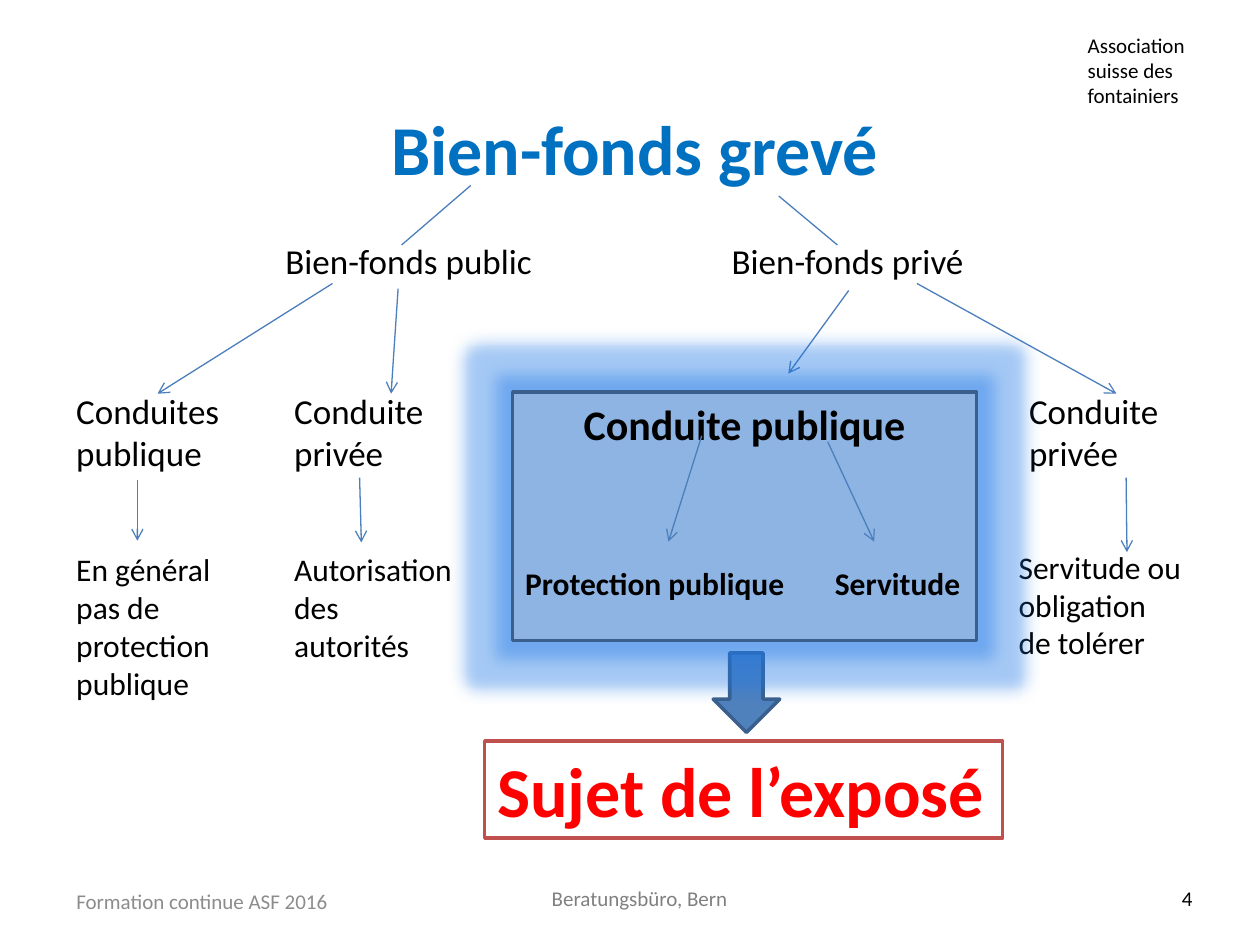
from lxml import etree
from pptx import Presentation
from pptx.dml.color import RGBColor
from pptx.enum import shapes, text
from pptx.oxml.ns import qn
from pptx.util import Pt

BLACK = RGBColor(0x00, 0x00, 0x00)
WHITE = RGBColor(0xFF, 0xFF, 0xFF)
TITLE_BLUE = RGBColor(0x00, 0x70, 0xC0)
LINE_BLUE = RGBColor(0x4B, 0x7E, 0xBC)
ARROW_BLUE = RGBColor(0x4F, 0x81, 0xBD)
OUTLINE_BLUE = RGBColor(0x3A, 0x5F, 0x8C)
PANEL_BLUE = RGBColor(0x8E, 0xB4, 0xE3)
GLOW_BLUE = RGBColor(0x1F, 0x78, 0xE6)
OUTLINE_RED = RGBColor(0xC0, 0x50, 0x4D)
RED = RGBColor(0xFF, 0x00, 0x00)
FOOTER_GREY = RGBColor(0x8C, 0x8C, 0x8C)
AUTHOR_GREY = RGBColor(0x80, 0x80, 0x80)

LEFT, CENTER, RIGHT = (text.PP_ALIGN.LEFT, text.PP_ALIGN.CENTER,
                       text.PP_ALIGN.RIGHT)
TOP, MIDDLE = text.MSO_ANCHOR.TOP, text.MSO_ANCHOR.MIDDLE


def style(paragraph, size, color=BLACK, bold=False, align=LEFT):
    paragraph.alignment = align
    font = paragraph.font
    font.name, font.size, font.bold = "Calibri", Pt(size), bold
    font.color.rgb = color


def write(shape, lines, size, color=BLACK, bold=False, align=LEFT,
          anchor=TOP, wrap=False):
    frame = shape.text_frame
    frame.word_wrap, frame.vertical_anchor = wrap, anchor
    frame.text = "\n".join(lines)
    for paragraph in frame.paragraphs:
        style(paragraph, size, color, bold, align)


def add_label(slide, box, lines, size, **options):
    shape = slide.shapes.add_textbox(*map(Pt, box))
    write(shape, lines, size, **options)
    return shape


def add_box(slide, kind, box, fill, line=None):
    shape = slide.shapes.add_shape(kind, *map(Pt, box))
    shape.shadow.inherit = False
    shape.fill.solid()
    shape.fill.fore_color.rgb = fill
    if line is None:
        shape.line.fill.background()
    else:
        shape.line.color.rgb, shape.line.width = line, Pt(2)
    return shape


def add_line(slide, x1, y1, x2, y2, arrow=True):
    line = slide.shapes.add_connector(
        shapes.MSO_CONNECTOR.STRAIGHT, Pt(x1), Pt(y1), Pt(x2), Pt(y2))
    line.line.color.rgb, line.line.width = LINE_BLUE, Pt(0.75)
    if arrow:
        etree.SubElement(line.line._get_or_add_ln(), qn("a:tailEnd"), type="arrow")
    etree.SubElement(line._element.spPr, qn("a:effectLst"))


def add_glow(shape, radius, color, alpha):
    effects = shape._element.spPr.find(qn("a:effectLst"))
    glow = etree.SubElement(effects, qn("a:glow"), rad=str(Pt(radius)))
    tint = etree.SubElement(glow, qn("a:srgbClr"), val=str(color))
    etree.SubElement(tint, qn("a:alpha"), val=str(alpha * 1000))


def add_header(slide, box):
    left, top, width, height = box
    add_label(slide, (left, top + 19.5, 652.5, 99.5), ["Bien-fonds grevé"], 40,
              color=TITLE_BLUE, bold=True, align=CENTER, anchor=MIDDLE, wrap=True)
    sender = add_box(slide, shapes.MSO_SHAPE.RECTANGLE,
                     (left + width - 99.5, top, 99.5, height), WHITE)
    write(sender, ["Association suisse des fontainiers"], 12, wrap=True)


def add_footer(slide, box):
    left, top, width, height = box
    add_label(slide, (left, top, 255.5, height), ["Formation continue ASF 2016"],
              12, color=FOOTER_GREY, anchor=MIDDLE, wrap=True)
    add_label(slide, (left + 244, top + 2, 170, 21.5), ["Beratungsbüro, Bern"],
              12, color=AUTHOR_GREY, align=CENTER, wrap=True)
    add_label(slide, (left + width - 34, top + 2, 34, 21.5), ["4"], 12,
              align=RIGHT, wrap=True)


def add_column(slide, box, heading, detail):
    """Pipe type in large text, its consequence below in smaller text."""
    shape = add_label(slide, box, heading + detail, 20)
    details = shape.text_frame.paragraphs[len(heading):]
    details[0].space_before = Pt(44)
    for paragraph in details:
        paragraph.font.size = Pt(18)


def add_tree(slide, box):
    left, top = box[:2]
    # Kinds of land
    for x, width, label in ((119.5, 157, "Bien-fonds public"),
                            (374.5, 148, "Bien-fonds privé")):
        add_label(slide, (left + x, top + 27.5, width, 31.5), [label], 20)
    # Kinds of pipe and what they require
    add_column(slide, (left, top + 113, 97, 186.5), ["Conduites", "publique"],
               ["En général", "pas de", "protection", "publique"])
    add_column(slide, (left + 124.5, top + 113, 106, 165), ["Conduite", "privée"],
               ["Autorisation", "des", "autorités"])
    add_label(slide, (left + 544.5, top + 113, 89, 55.5), ["Conduite", "privée"], 20)
    add_label(slide, (left + 538.5, top + 203.5, 109, 72.5),
              ["Servitude ou", "obligation", "de tolérer"], 18)
    # Branches from the title
    for ends in ((232.5, 0, 193, 34), (408.5, 6, 442, 34)):
        add_line(slide, *offset(ends, left, top), arrow=False)
    # Arrows down the tree
    for ends in ((153.5, 56, 53.5, 119), (191, 59, 187, 119),
                 (448.5, 60, 414, 107.5), (487.5, 56, 601.5, 119),
                 (42, 168.5, 42, 203), (169, 167, 170, 204),
                 (607, 167, 607.5, 209.5)):
        add_line(slide, *offset(ends, left, top))


def offset(ends, left, top):
    x1, y1, x2, y2 = ends
    return left + x1, top + y1, left + x2, top + y2


def add_focus(slide, box):
    """Glowing panel with an arrow to the subject of the talk."""
    left, top, width, height = box
    add_box(slide, shapes.MSO_SHAPE.DOWN_ARROW,
            (left + 114.5, top + 149, 38, 45.5), ARROW_BLUE, OUTLINE_BLUE)
    subject = add_box(slide, shapes.MSO_SHAPE.RECTANGLE,
                      (left - 16, top + 199.5, 296, 55.5), WHITE, OUTLINE_RED)
    write(subject, ["Sujet de l’exposé"], 40, color=RED, bold=True)

    panel = add_box(slide, shapes.MSO_SHAPE.RECTANGLE, box, PANEL_BLUE, OUTLINE_BLUE)
    add_glow(panel, 18, GLOW_BLUE, 40)
    write(panel, ["Conduite publique", "Protection publique\tServitude"], 24,
          bold=True, align=CENTER, wrap=True)
    options = panel.text_frame.paragraphs[1]
    options.space_before = Pt(66)
    properties = options._p.get_or_add_pPr()
    tabs = etree.Element(qn("a:tabLst"))
    etree.SubElement(tabs, qn("a:tab"), pos=str(Pt(177)), algn="l")
    properties.find(qn("a:defRPr")).addprevious(tabs)
    style(options, 18, bold=True)

    for ends in ((180, 28.5, 206.5, 85.5), (108, 25, 89, 85.5)):
        add_line(slide, *offset(ends, left, top))


def main():
    presentation = Presentation()
    presentation.slide_width, presentation.slide_height = Pt(720), Pt(540)
    slide = presentation.slides.add_slide(presentation.slide_layouts[6])
    add_header(slide, (36.5, 15, 677.5, 51))
    add_footer(slide, (36.5, 500.5, 652, 29))
    add_tree(slide, (36.5, 106, 648, 300))
    add_focus(slide, (293, 224, 265, 142))
    presentation.save("out.pptx")


if __name__ == "__main__":
    main()
